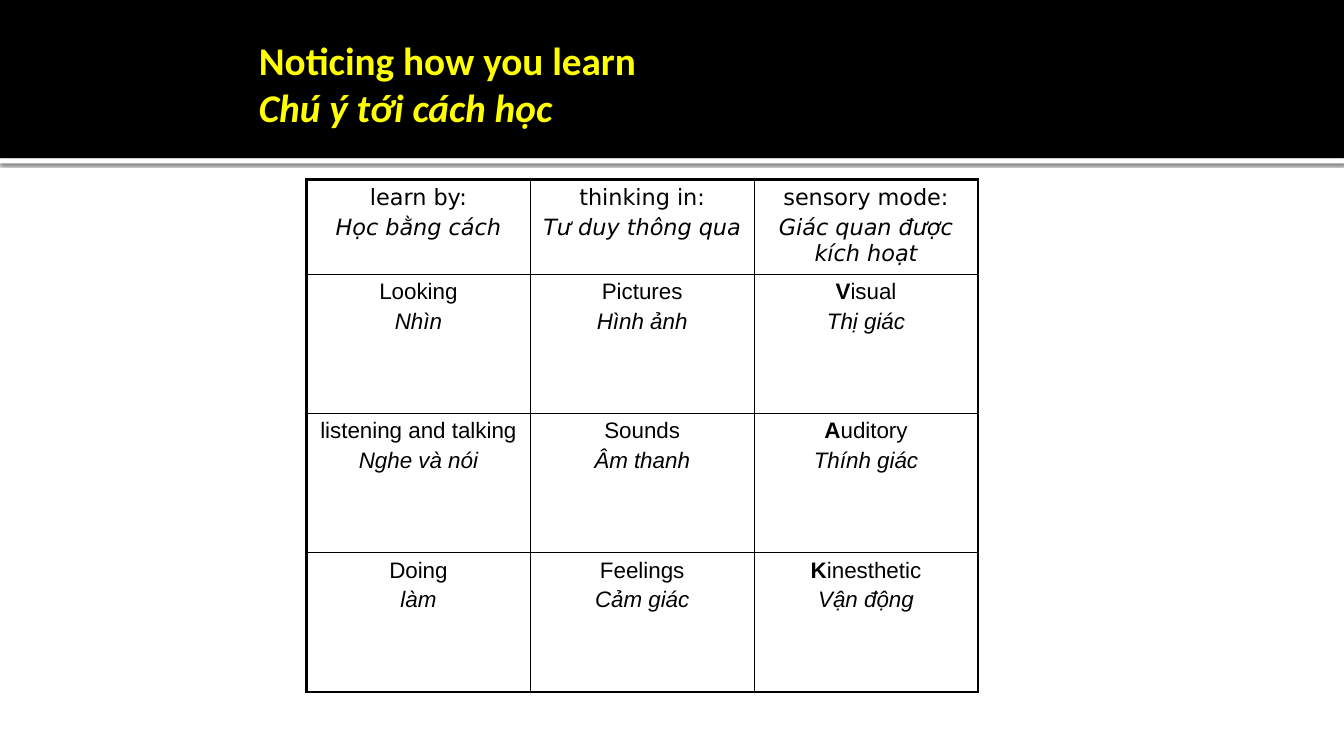
"""Build the slide on noticing how you learn."""
from lxml import etree
from pptx import Presentation
from pptx import util as u
from pptx.dml.color import RGBColor
from pptx.enum import shapes, text
from pptx.oxml import ns

BLACK = RGBColor(0, 0, 0)
WHITE = RGBColor(255, 255, 255)
YELLOW = RGBColor(255, 255, 0)

TITLE = ("Noticing how you learn", "Chú ý tới cách học")
ROWS = [
    [("learn by:", "Học bằng cách"),
     ("thinking in:", "Tư duy thông qua"),
     ("sensory mode:", "Giác quan được kích hoạt")],
    [("Looking", "Nhìn"), ("Pictures", "Hình ảnh"), ("Visual", "Thị giác")],
    [("listening and talking", "Nghe và nói"), ("Sounds", "Âm thanh"), ("Auditory", "Thính giác")],
    [("Doing", "làm"), ("Feelings", "Cảm giác"), ("Kinesthetic", "Vận động")],
]
ROW_HEIGHTS = [0.93, 1.38, 1.38, 1.38]
COL_WIDTH = 2.22
SLIDE_WIDTH = 13.33
BAND_HEIGHT = 1.57
THIN, THICK = 1, 2.25


def add_band(s, top, height, color):
    sp = s.shapes.add_shape(shapes.MSO_SHAPE.RECTANGLE, 0, u.Inches(top),
                            u.Inches(SLIDE_WIDTH), u.Inches(height))
    sp.shadow.inherit = False
    sp.fill.solid()
    sp.fill.fore_color.rgb = color
    sp.line.fill.background()
    return sp


def add_shadow(sp):
    effects = sp._element.spPr.find(ns.qn("a:effectLst"))
    shadow = etree.SubElement(effects, ns.qn("a:outerShdw"), blurRad=str(u.Pt(2.5)),
                              dist=str(u.Pt(0.8)), dir="5400000", rotWithShape="0")
    color = etree.SubElement(shadow, ns.qn("a:srgbClr"), val=str(BLACK))
    etree.SubElement(color, ns.qn("a:alpha"), val="60000")


def set_borders(cell, widths):
    for side, width in widths.items():
        ln = etree.SubElement(cell._tc.get_or_add_tcPr(), ns.qn("a:ln" + side), w=str(u.Pt(width)))
        fill = etree.SubElement(ln, ns.qn("a:solidFill"))
        etree.SubElement(fill, ns.qn("a:srgbClr"), val=str(BLACK))


def write_pair(tf, pair, font, size, color, bold=False, bold_initial=False):
    for i, line in enumerate(pair):
        p = tf.paragraphs[0] if i == 0 else tf.add_paragraph()
        p.font.name, p.font.size = font, u.Pt(size)
        p.font.color.rgb = color
        p.font.italic = i == 1
        if bold_initial and i == 0:
            p.add_run().text = line[0]
            p.runs[0].font.bold = True
            p.add_run().text = line[1:]
        else:
            p.font.bold = bold
            p.add_run().text = line


def add_table(s):
    last_row, last_col = len(ROWS) - 1, len(ROWS[0]) - 1
    table = s.shapes.add_table(len(ROWS), len(ROWS[0]), u.Inches(3.04), u.Inches(1.78),
                               u.Inches(COL_WIDTH * len(ROWS[0])),
                               u.Inches(sum(ROW_HEIGHTS))).table
    table.first_row = table.horz_banding = False
    for column in table.columns:
        column.width = u.Inches(COL_WIDTH)
    for r, row in enumerate(ROWS):
        table.rows[r].height = u.Inches(ROW_HEIGHTS[r])
        for c, pair in enumerate(row):
            cell = table.cell(r, c)
            edges = {"L": c == 0, "R": c == last_col, "T": r == 0, "B": r == last_row}
            set_borders(cell, {side: THICK if outer else THIN for side, outer in edges.items()})
            cell.fill.background()
            write_pair(cell.text_frame, pair, "Arial" if r else "DejaVu Sans", 16, BLACK,
                       bold_initial=r > 0 and c == last_col)
            for p in cell.text_frame.paragraphs:
                p.alignment = text.PP_ALIGN.CENTER
            cell.text_frame.paragraphs[1].space_before = u.Pt(3.2)


def main():
    prs = Presentation()
    prs.slide_width, prs.slide_height = u.Inches(SLIDE_WIDTH), u.Inches(7.5)
    s = prs.slides.add_slide(prs.slide_layouts[6])
    add_shadow(add_band(s, BAND_HEIGHT, 0.05, WHITE))
    add_band(s, 0, BAND_HEIGHT, BLACK)
    title = s.shapes.add_textbox(u.Inches(2.47), u.Inches(0.31), u.Inches(8.23), u.Inches(1.04))
    title.text_frame.word_wrap = True
    write_pair(title.text_frame, TITLE, "Calibri", 28, YELLOW, bold=True)
    add_table(s)
    prs.save("out.pptx")


if __name__ == "__main__":
    main()
